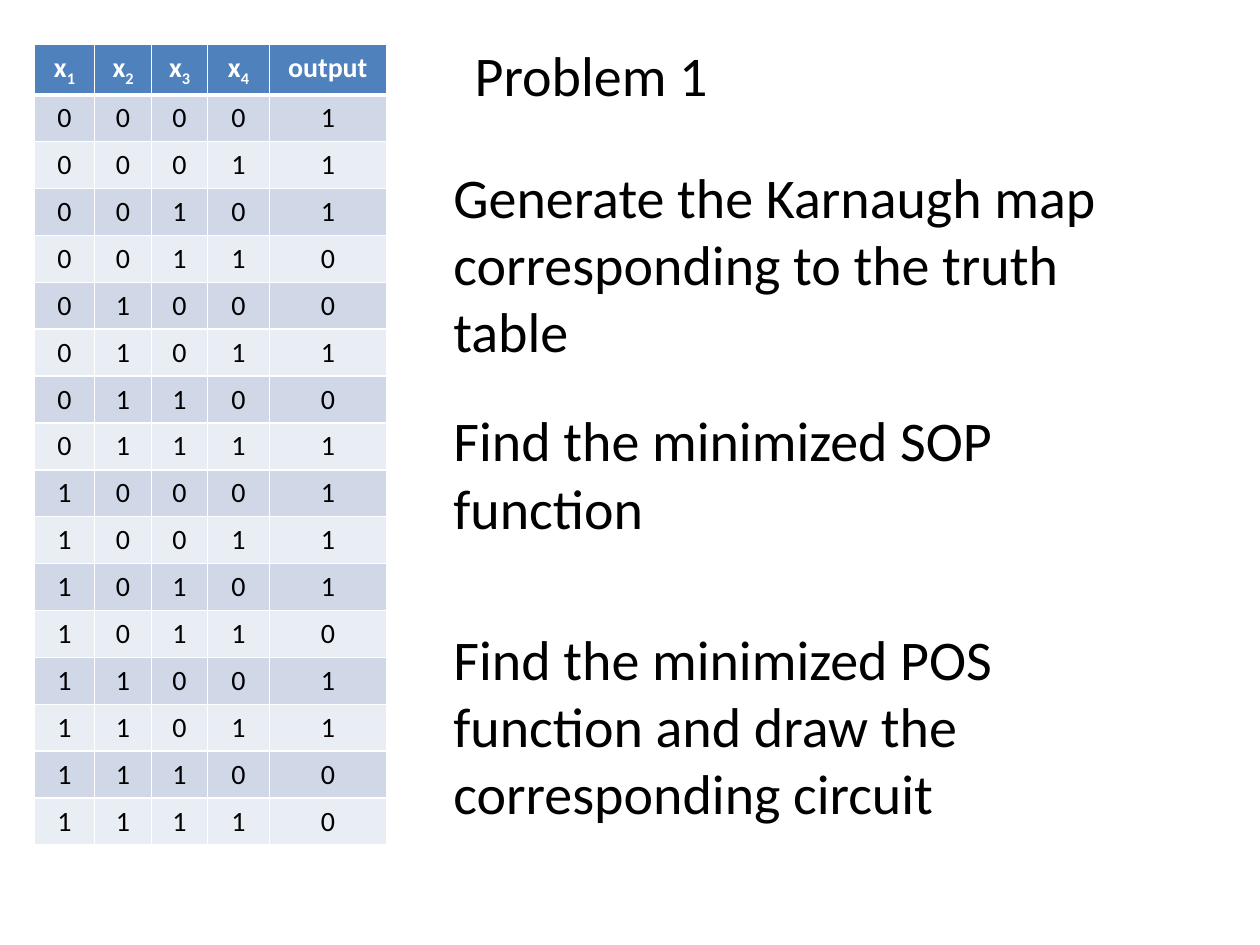
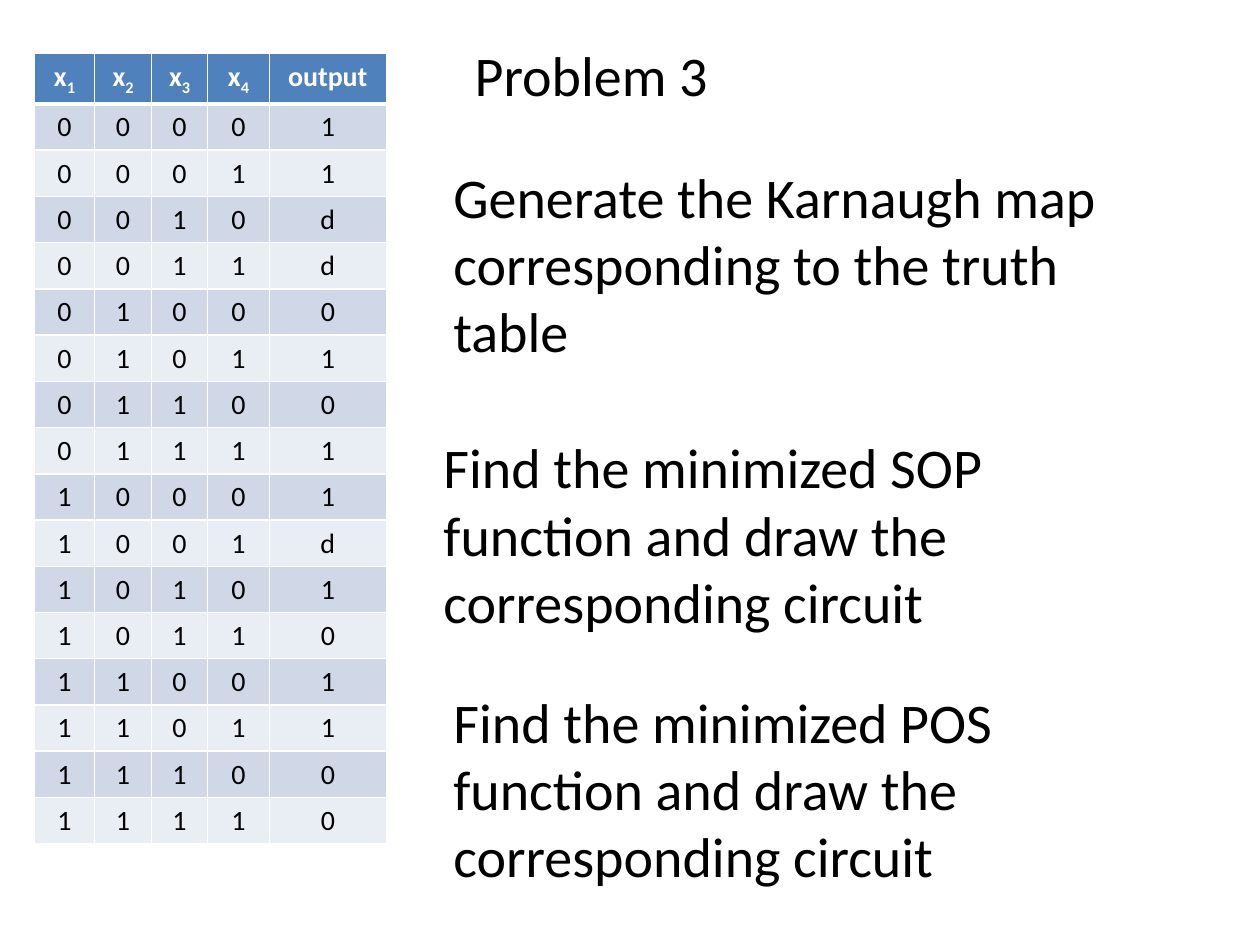
from itertools import product

from lxml import etree
from pptx import Presentation
from pptx.dml.color import RGBColor
from pptx.enum.text import MSO_ANCHOR, PP_ALIGN
from pptx.oxml.ns import qn
from pptx.util import Cm, Pt

MIDDLE = MSO_ANCHOR.MIDDLE
LEFT = PP_ALIGN.LEFT
CENTER = PP_ALIGN.CENTER

COLORS = {
    "text": "000000",
    "white": "FFFFFF",
    "head": "4F81BD",
    "odd": "D0D8E8",
    "even": "E9EDF4",
}
FONT = "Calibri"
FORMATS = {
    "prompt": {"size": Pt(32), "bold": False, "name": FONT},
    "head": {"size": Pt(16), "bold": True, "name": FONT},
    "body": {"size": Pt(16), "bold": False, "name": FONT},
}
COLS = (1.22, 1.14, 1.14, 1.24, 2.36)
ROW = 0.93
THIN, THICK = 1, 3
INPUTS = 4

MAP = "Generate the Karnaugh map corresponding to the truth table"
SOP = "Find the minimized SOP function"
POS = "Find the minimized POS function"
DRAW = " and draw the corresponding circuit"

PROBLEMS = (
    {
        "title": "Problem 1",
        "top": 0.89,
        "outputs": "1110010111101100",
        "tasks": (
            (MAP, 8.89, 3.18, 4.24),
            (SOP, 8.89, 8.03, 3.02),
            (POS + DRAW, 8.89, 12.5, 4.24),
        ),
    },
    {
        "title": "Problem 3",
        "top": 1.07,
        "outputs": "11dd01011d101100",
        "tasks": (
            (MAP, 8.89, 3.18, 4.24),
            (SOP + DRAW, 8.69, 8.64, 4.24),
            (POS + DRAW, 8.89, 13.77, 4.24),
        ),
    },
)


class Deck:
    def __init__(self):
        self.prs = Presentation()
        self.prs.slide_width = Cm(25.4)
        self.prs.slide_height = Cm(19.05)
        self.slide = None

    def page(self):
        self.slide = self.prs.slides.add_slide(self.prs.slide_layouts[6])

    def label(self, para, text, style, color, align):
        para.alignment = align
        run = para.add_run()
        run.text = text
        for key, value in FORMATS[style].items():
            setattr(run.font, key, value)
        run.font.color.rgb = RGBColor.from_string(COLORS[color])
        return run

    def prompt(self, text, left, top, height, width=15.04):
        box = self.slide.shapes.add_textbox(Cm(left), Cm(top), Cm(width), Cm(height))
        frame = box.text_frame
        frame.word_wrap = True
        frame.vertical_anchor = MIDDLE
        self.label(frame.paragraphs[0], text, "prompt", "text", LEFT)

    def border(self, cell, top, bottom):
        props = cell._tc.get_or_add_tcPr()
        sides = {"lnL": THIN, "lnR": THIN, "lnT": top, "lnB": bottom}
        for place, (side, width) in enumerate(sides.items()):
            line = etree.Element(qn(f"a:{side}"), w=str(Pt(width)))
            fill = etree.SubElement(line, qn("a:solidFill"))
            etree.SubElement(fill, qn("a:srgbClr"), val=COLORS["white"])
            props.insert(place, line)

    def cell(self, cell, text, style, fill, color, top=THIN, bottom=THIN):
        cell.fill.solid()
        cell.fill.fore_color.rgb = RGBColor.from_string(COLORS[fill])
        self.border(cell, top, bottom)
        para = cell.text_frame.paragraphs[0]
        base, _, sub = text.partition("_")
        self.label(para, base, style, color, CENTER)
        if sub:
            run = self.label(para, sub, style, color, CENTER)
            run.font._element.set("baseline", "-25000")

    def truth(self, outputs, top):
        rows = [(*bits, out) for bits, out in zip(product("01", repeat=INPUTS), outputs)]
        count = len(rows) + 1
        frame = self.slide.shapes.add_table(
            count, len(COLS), Cm(0.69), Cm(top), Cm(sum(COLS)), Cm(ROW * count)
        )
        table = frame.table
        table.horz_banding = False
        for col, width in zip(table.columns, COLS):
            col.width = Cm(width)
        for row in table.rows:
            row.height = Cm(ROW)
        heads = [f"x_{n}" for n in range(1, INPUTS + 1)] + ["output"]
        for c, text in enumerate(heads):
            self.cell(table.cell(0, c), text, "head", "head", "white", bottom=THICK)
        for r, row in enumerate(rows, 1):
            band = "odd" if r % 2 else "even"
            edge = THICK if r == 1 else THIN
            for c, text in enumerate(row):
                self.cell(table.cell(r, c), text, "body", band, "text", top=edge)


def main():
    deck = Deck()
    for problem in PROBLEMS:
        deck.page()
        deck.truth(problem["outputs"], problem["top"])
        deck.prompt(problem["title"], 9.32, 0.38, 2.21, width=6.05)
        for task in problem["tasks"]:
            deck.prompt(*task)
    deck.prs.save("out.pptx")


if __name__ == "__main__":
    main()
